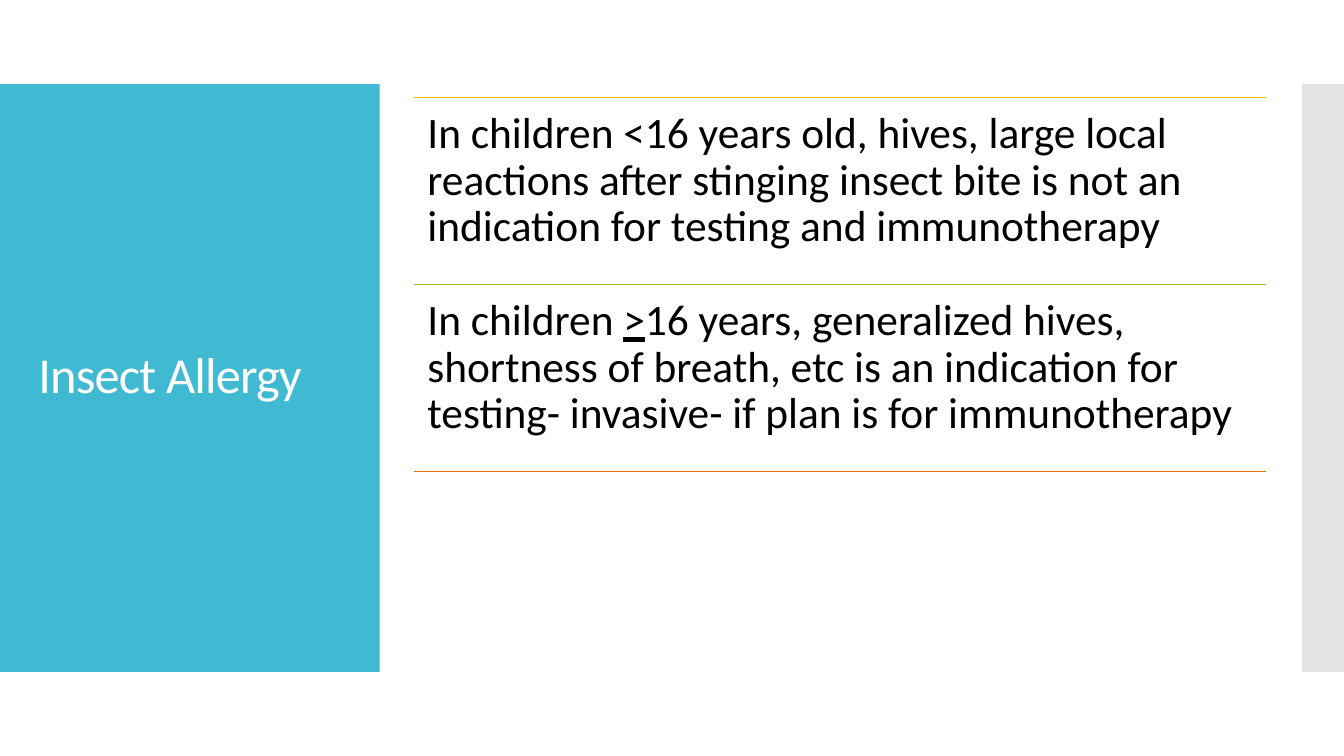
from dataclasses import dataclass

from lxml import etree
from pptx import Presentation
from pptx.dml.color import RGBColor
from pptx.enum.shapes import MSO_CONNECTOR, MSO_SHAPE
from pptx.enum.text import MSO_ANCHOR, MSO_AUTO_SIZE, PP_ALIGN
from pptx.oxml.ns import qn
from pptx.util import Pt

RECTANGLE = MSO_SHAPE.RECTANGLE
STRAIGHT = MSO_CONNECTOR.STRAIGHT
TOP, MIDDLE = MSO_ANCHOR.TOP, MSO_ANCHOR.MIDDLE
LEFT = PP_ALIGN.LEFT
NO_AUTOFIT = MSO_AUTO_SIZE.NONE
TITLE_ONLY = 5

TITLE = "Insect Allergy"
# Each statement is a list of (text, underlined) runs.
STATEMENTS = [
    [("In children <16 years old, hives, large local reactions after stinging "
      "insect bite is not an indication for testing and immunotherapy", False)],
    [("In children ", False), (">", True),
     ("16 years, generalized hives, shortness of breath, etc is an indication "
      "for testing- invasive- if plan is for immunotherapy", False)],
]


@dataclass(frozen=True)
class Theme:
    font: str = "Calibri"
    title_size: float = 36
    body_size: float = 31
    title_color: str = "FFFFFF"
    body_color: str = "000000"
    panel: str = "40BAD2"
    edge: str = "C8C8C8"
    rules: tuple = ("FAB900", "90BB23", "EE7008")
    rule_width: float = 0.85


THEME = Theme()
SLIDE_WIDTH, SLIDE_HEIGHT = 960, 540
BAND_TOP, BAND_HEIGHT = 60, 420
PANEL_WIDTH, EDGE_WIDTH = 271.2, 30
LIST_LEFT, LIST_TOP, LIST_WIDTH = 296, 69.8, 608.4
ROW_HEIGHT = 133.5


def write_text(shape, runs, *, size, color, anchor, margins, tracking=0):
    """Fill a shape with one paragraph; margins are (horizontal, vertical)."""
    frame = shape.text_frame
    frame.word_wrap = True
    frame.auto_size = NO_AUTOFIT
    frame.vertical_anchor = anchor
    frame.margin_left = frame.margin_right = Pt(margins[0])
    frame.margin_top = frame.margin_bottom = Pt(margins[1])
    paragraph = frame.paragraphs[0]
    paragraph.alignment = LEFT
    paragraph.line_spacing = 0.9
    paragraph.space_before = Pt(0)
    for text, underlined in runs:
        run = paragraph.add_run()
        run.text = text
        run.font.name = THEME.font
        run.font.size = Pt(size)
        run.font.color.rgb = RGBColor.from_string(color)
        run.font.underline = underlined
        if tracking:
            run.font._element.set("spc", str(round(tracking * 100)))


def add_band(slide, left, width, color, opacity=100):
    band = slide.shapes.add_shape(
        RECTANGLE, Pt(left), Pt(BAND_TOP), Pt(width), Pt(BAND_HEIGHT))
    band.shadow.inherit = False
    band.fill.solid()
    band.fill.fore_color.rgb = RGBColor.from_string(color)
    band.line.fill.background()
    if opacity < 100:
        fill_color = band._element.spPr.find(f"{qn('a:solidFill')}/{qn('a:srgbClr')}")
        etree.SubElement(fill_color, qn("a:alpha"), val=str(opacity * 1000))


def add_rule(slide, top, color):
    rule = slide.shapes.add_connector(
        STRAIGHT, Pt(LIST_LEFT), Pt(top), Pt(LIST_LEFT + LIST_WIDTH), Pt(top))
    rule.line.color.rgb = RGBColor.from_string(color)
    rule.line.width = Pt(THEME.rule_width)
    etree.SubElement(rule._element.spPr, qn("a:effectLst"))


def add_title(slide):
    title = slide.shapes.title
    title.left, title.top, title.width, title.height = (
        Pt(20.2), Pt(88.6), Pt(231.8), Pt(362))
    write_text(title, [(TITLE, False)], size=THEME.title_size,
               color=THEME.title_color, anchor=MIDDLE, margins=(7.2, 3.6),
               tracking=-0.6)
    # Bring the title in front of the coloured panel.
    slide.shapes._spTree.append(title._element)


def add_statements(slide):
    for index, color in enumerate(THEME.rules):
        top = LIST_TOP + index * ROW_HEIGHT
        add_rule(slide, top, color)
        if index < len(STATEMENTS):
            box = slide.shapes.add_textbox(
                Pt(LIST_LEFT), Pt(top), Pt(LIST_WIDTH), Pt(ROW_HEIGHT))
            write_text(box, STATEMENTS[index], size=THEME.body_size,
                       color=THEME.body_color, anchor=TOP, margins=(9.3, 9.3))


def main():
    presentation = Presentation()
    presentation.slide_width = Pt(SLIDE_WIDTH)
    presentation.slide_height = Pt(SLIDE_HEIGHT)
    slide = presentation.slides.add_slide(presentation.slide_layouts[TITLE_ONLY])
    add_band(slide, 0, PANEL_WIDTH, THEME.panel)
    add_band(slide, SLIDE_WIDTH - EDGE_WIDTH, EDGE_WIDTH, THEME.edge, opacity=50)
    add_title(slide)
    add_statements(slide)
    presentation.save("out.pptx")


if __name__ == "__main__":
    main()
